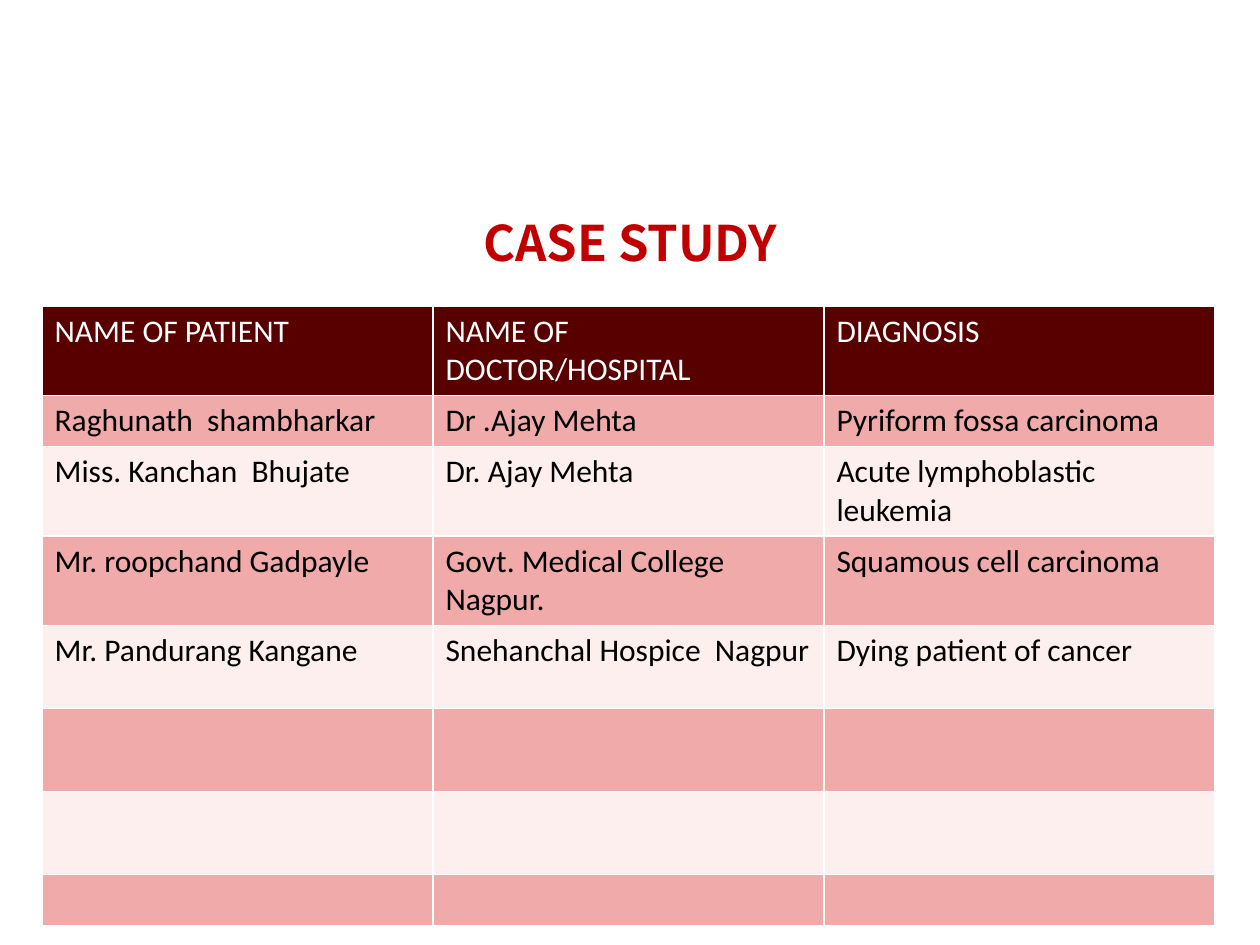
from lxml import etree
from pptx import Presentation
from pptx import util as u
from pptx.dml.color import RGBColor
from pptx.enum import text
from pptx.oxml import ns

PX = u.Inches(1) // 126
WHITE = RGBColor(0xFF, 0xFF, 0xFF)
BLACK = RGBColor(0x00, 0x00, 0x00)
RED = RGBColor(0xC0, 0x00, 0x00)
MAROON = RGBColor(0x58, 0x00, 0x00)
ROSE = RGBColor(0xF0, 0xAA, 0xAA)
BLUSH = RGBColor(0xFD, 0xEF, 0xED)


def write(frame, words, font="Calibri", size=18, color=BLACK, bold=False,
          align=text.PP_ALIGN.LEFT):
    para = frame.paragraphs[0]
    para.alignment = align
    span = para.add_run()
    span.text = words
    span.font.name = font
    span.font.size = u.Pt(size)
    span.font.bold = bold
    span.font.color.rgb = color


def add_borders(cell, color=WHITE, points=1):
    properties = cell._tc.get_or_add_tcPr()
    for side in ("lnL", "lnR", "lnT", "lnB"):
        line = etree.SubElement(properties, ns.qn(f"a:{side}"), w=str(u.Pt(points)))
        fill = etree.SubElement(line, ns.qn("a:solidFill"))
        etree.SubElement(fill, ns.qn("a:srgbClr"), val=str(color))


deck = Presentation()
deck.slide_width, deck.slide_height = 1260 * PX, 945 * PX
page = deck.slides.add_slide(deck.slide_layouts[5])

# Title
title = page.shapes.title
title.left, title.top, title.width, title.height = 42 * PX, 189 * PX, 1176 * PX, 105 * PX
title.text_frame.vertical_anchor = text.MSO_ANCHOR.MIDDLE
write(title.text_frame, "CASE STUDY", font="Noto Sans CJK SC", size=28, color=RED,
      bold=True, align=text.PP_ALIGN.CENTER)

# Patient table, with three rows left open
cases = [
    ("NAME OF PATIENT", "NAME OF DOCTOR/HOSPITAL", "DIAGNOSIS"),
    ("Raghunath  shambharkar", "Dr .Ajay Mehta", "Pyriform fossa carcinoma"),
    ("Miss. Kanchan  Bhujate", "Dr. Ajay Mehta", "Acute lymphoblastic leukemia"),
    ("Mr. roopchand Gadpayle", "Govt. Medical College Nagpur.", "Squamous cell carcinoma"),
    ("Mr. Pandurang Kangane", "Snehanchal Hospice  Nagpur", "Dying patient of cancer"),
] + [("", "", "")] * 3
heights = [83, 48, 83, 83, 83, 83, 83, 48]

table = page.shapes.add_table(len(cases), 3, 42 * PX, 306 * PX,
                              1173 * PX, sum(heights) * PX).table
table.horz_banding = False
for column in table.columns:
    column.width = 391 * PX

for index, (case, height) in enumerate(zip(cases, heights)):
    table.rows[index].height = height * PX
    band = MAROON if index == 0 else ROSE if index % 2 else BLUSH
    for cell, words in zip(table.rows[index].cells, case):
        add_borders(cell)
        cell.fill.solid()
        cell.fill.fore_color.rgb = band
        if words:
            write(cell.text_frame, words, color=BLACK if index else WHITE)

deck.save("out.pptx")
